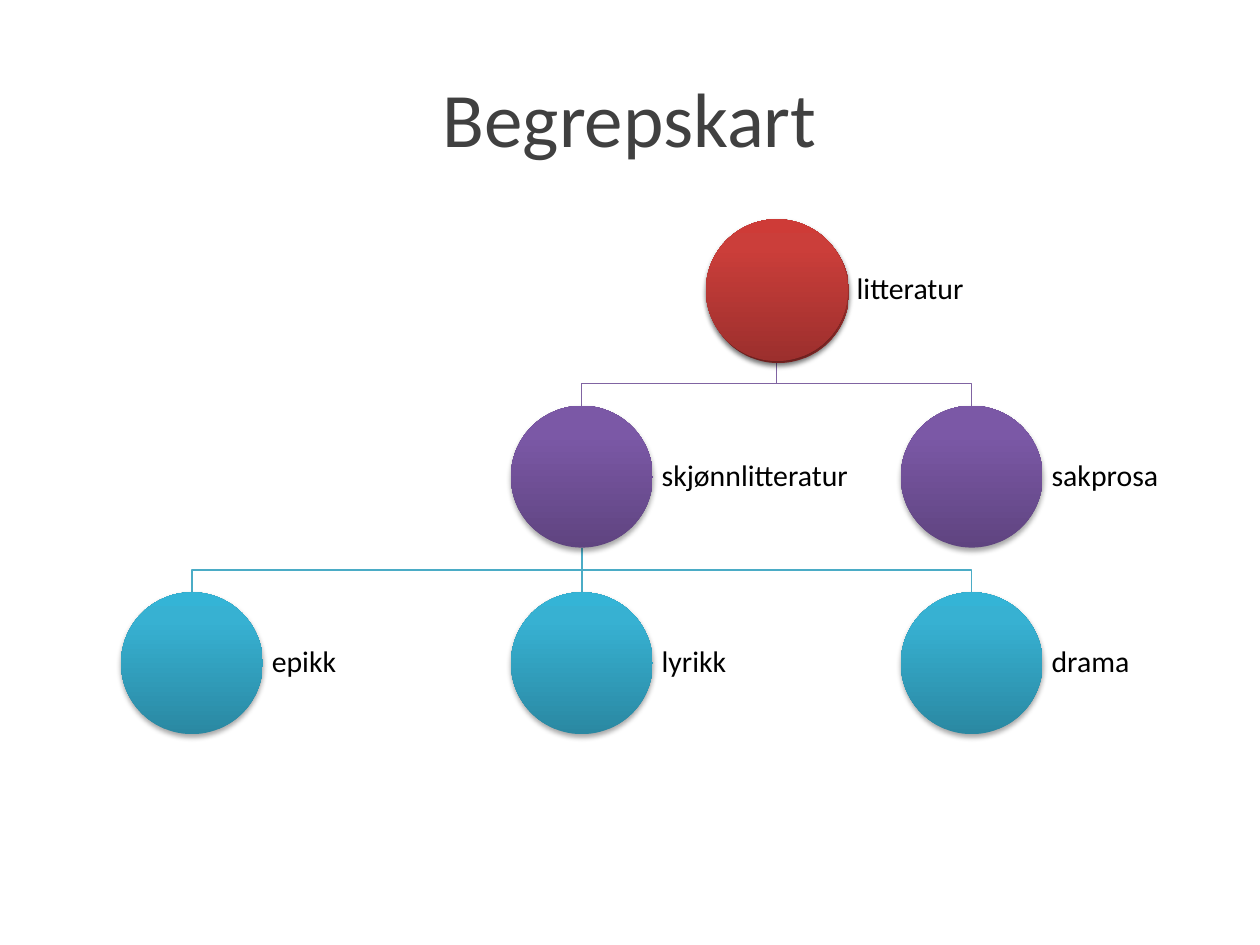
"""Build the slide "Begrepskart", a concept map of literary genres."""
import copy

import lxml.etree
import pptx
import pptx.dml.color
import pptx.enum.shapes
import pptx.enum.text
import pptx.oxml.ns
import pptx.util

Cm = pptx.util.Cm
COLORS = {
    "title": "404040",
    "label": "000000",
    "shadow": "000000",
    "purple_line": "8064A2",
    "blue_line": "4BACC6",
}
GRADIENTS = {
    "red": ("9C2F2D", "CB3E3A", "CE3B37"),
    "purple": ("5F4480", "7B58A6", "7C57A8"),
    "blue": ("2A88A2", "37B1D2", "34B4D6"),
}
STOP_POSITIONS = (0, 0.8, 1)
LEFT, TOP, COLUMN_STEP, ROW_STEP, DIAMETER = 2.44, 4.42, 7.86, 3.76, 2.86
CONCEPTS = [
    ("litteratur", 1.5, 0, "red"),
    ("skjønnlitteratur", 1, 1, "purple"),
    ("sakprosa", 2, 1, "purple"),
    ("epikk", 0, 2, "blue"),
    ("lyrikk", 1, 2, "blue"),
    ("drama", 2, 2, "blue"),
]
LINKS = [
    (1.5, 2, 0, "purple_line"),
    (1, 2, 1, "blue_line"),
    (1, 1, 1, "blue_line"),
    (1, 0, 1, "blue_line"),
    (1.5, 1, 0, "purple_line"),
]

deck = pptx.Presentation()
deck.slide_width, deck.slide_height = Cm(25.4), Cm(19.05)
page = deck.slides.add_slide(deck.slide_layouts[6])


def add_text(text, left, top, width, height, *, size, color, align, inset, spacing=1.0):
    box = page.shapes.add_textbox(Cm(left), Cm(top), Cm(width), Cm(height))
    frame = box.text_frame
    frame.word_wrap = True
    frame.vertical_anchor = pptx.enum.text.MSO_ANCHOR.MIDDLE
    frame.margin_left = frame.margin_right = Cm(inset)
    frame.margin_top = frame.margin_bottom = Cm(inset)
    para = frame.paragraphs[0]
    para.alignment = align
    para.line_spacing = spacing
    span = para.add_run()
    span.text = text
    span.font.name = "Calibri"
    span.font.size = pptx.util.Pt(size)
    span.font.color.rgb = pptx.dml.color.RGBColor.from_string(COLORS[color])


def add_circle(left, top, gradient):
    circle = page.shapes.add_shape(
        pptx.enum.shapes.MSO_SHAPE.OVAL, Cm(left), Cm(top), Cm(DIAMETER), Cm(DIAMETER)
    )
    circle.line.fill.background()
    circle.fill.gradient()
    circle.fill.gradient_angle = 90
    stop_list = circle._element.spPr.find(".//" + pptx.oxml.ns.qn("a:gsLst"))
    stop_list.append(copy.deepcopy(stop_list[-1]))
    stops = zip(circle.fill.gradient_stops, STOP_POSITIONS, GRADIENTS[gradient])
    for stop, position, color in stops:
        stop.position = position
        stop.color.rgb = pptx.dml.color.RGBColor.from_string(color)
    circle.shadow.inherit = False
    effects = circle._element.spPr.find(pptx.oxml.ns.qn("a:effectLst"))
    shadow = lxml.etree.SubElement(
        effects, pptx.oxml.ns.qn("a:outerShdw"),
        blurRad=str(pptx.util.Pt(3.1)), dist=str(pptx.util.Pt(1.8)),
        dir="5400000", rotWithShape="0",
    )
    tint = lxml.etree.SubElement(
        shadow, pptx.oxml.ns.qn("a:srgbClr"), val=COLORS["shadow"]
    )
    lxml.etree.SubElement(tint, pptx.oxml.ns.qn("a:alpha"), val="35000")


add_text("Begrepskart", 1.27, 0.76, 22.86, 3.18, size=44, color="title",
         align=pptx.enum.text.PP_ALIGN.CENTER, inset=0.2)

for parent_column, child_column, row, color in LINKS:
    start_x = Cm(LEFT + parent_column * COLUMN_STEP + DIAMETER / 2)
    end_x = Cm(LEFT + child_column * COLUMN_STEP + DIAMETER / 2)
    start_y = Cm(TOP + row * ROW_STEP + DIAMETER)
    end_y = Cm(TOP + (row + 1) * ROW_STEP)
    if start_x == end_x:
        link = page.shapes.add_connector(
            pptx.enum.shapes.MSO_CONNECTOR.STRAIGHT, start_x, start_y, end_x, end_y
        )
        lxml.etree.SubElement(link._element.spPr, pptx.oxml.ns.qn("a:effectLst"))
    else:
        middle_y = (start_y + end_y) // 2
        outline = page.shapes.build_freeform(start_x, start_y)
        outline.add_line_segments(
            [(start_x, middle_y), (end_x, middle_y), (end_x, end_y)], close=False
        )
        link = outline.convert_to_shape()
        link.fill.background()
        link.shadow.inherit = False
    link.line.color.rgb = pptx.dml.color.RGBColor.from_string(COLORS[color])
    link.line.width = pptx.util.Pt(0.75)

add_circle(LEFT + 1.5 * COLUMN_STEP + 0.03, TOP + 0.04, "red")
for name, column, row, gradient in CONCEPTS:
    left, top = LEFT + column * COLUMN_STEP, TOP + row * ROW_STEP
    add_circle(left, top, gradient)
    add_text(name, left + DIAMETER, top, 4.29, DIAMETER, size=17, color="label",
             align=pptx.enum.text.PP_ALIGN.LEFT, inset=0.18, spacing=0.9)

deck.save("out.pptx")
